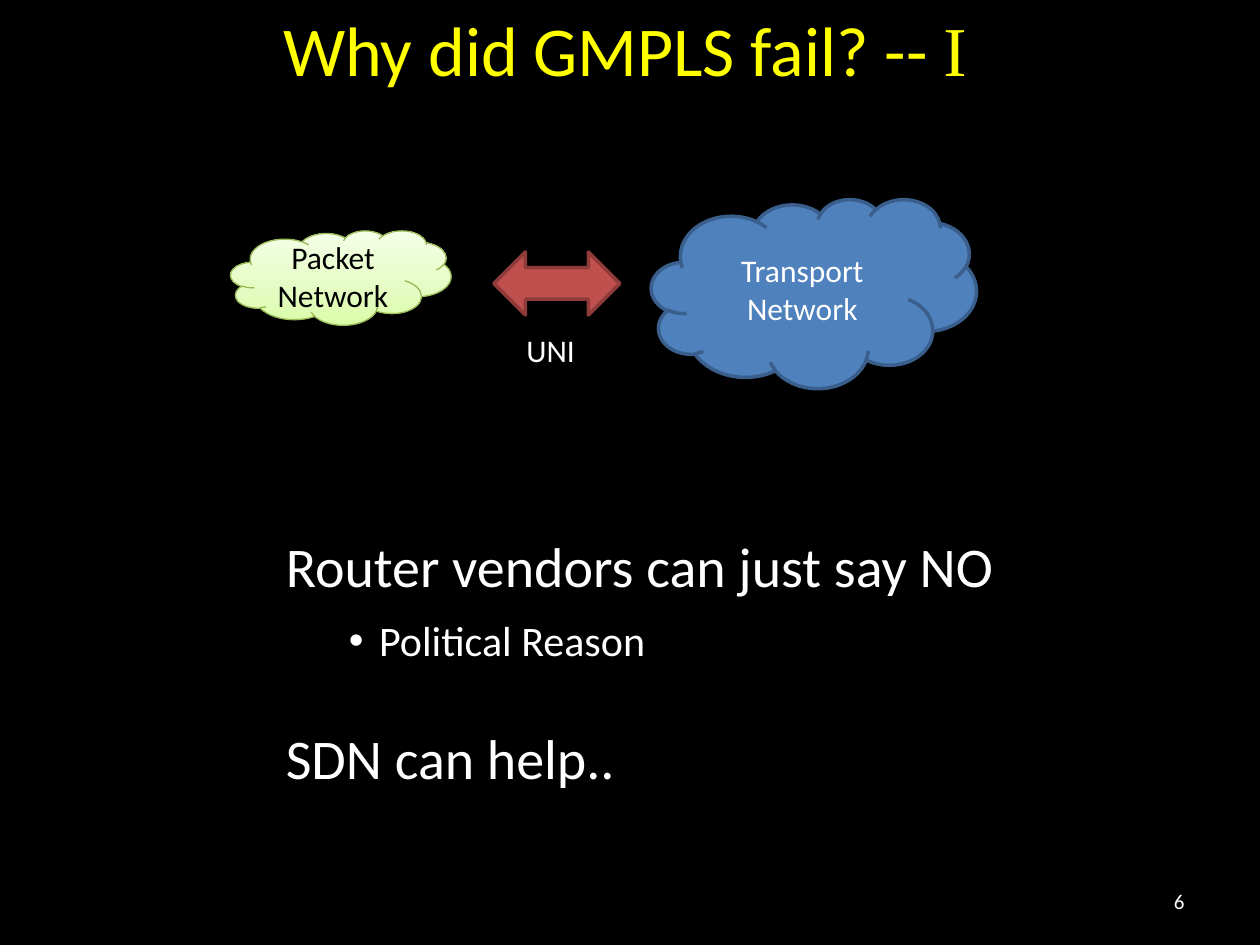
from copy import deepcopy
from dataclasses import dataclass
from typing import Optional

from lxml import etree
from pptx import Presentation
from pptx.dml.color import RGBColor
from pptx.enum.shapes import MSO_SHAPE
from pptx.enum.text import MSO_ANCHOR, PP_ALIGN
from pptx.oxml.ns import qn
from pptx.util import Inches, Pt

CLOUD = MSO_SHAPE.CLOUD
DOUBLE_ARROW = MSO_SHAPE.LEFT_RIGHT_ARROW
LEFT, CENTER, RIGHT = PP_ALIGN.LEFT, PP_ALIGN.CENTER, PP_ALIGN.RIGHT
TOP, MIDDLE = MSO_ANCHOR.TOP, MSO_ANCHOR.MIDDLE


@dataclass(frozen=True)
class Theme:
    font: str = "Calibri"
    numeral_font: str = "Times New Roman"
    background: str = "000000"
    text: str = "FFFFFF"
    dark_text: str = "000000"
    title: str = "FFFF00"
    transport: str = "4F81BD"
    transport_line: str = "3A5F8C"
    packet: tuple = ((0, "DAFDA7"), (0.35, "E4FCC2"), (1, "F5FFE7"))
    packet_line: str = "98B955"
    arrow: str = "C0504D"
    arrow_line: str = "8E3B39"
    title_size: int = 40
    point_size: int = 32
    reason_size: int = 24
    label_size: int = 18
    number_size: int = 12


THEME = Theme()


@dataclass(frozen=True)
class Box:
    left: float
    top: float
    width: float
    height: float

    def lengths(self) -> tuple:
        return tuple(Inches(n) for n in (self.left, self.top, self.width, self.height))


@dataclass(frozen=True)
class Label:
    text: str
    box: Box
    size: int
    color: str = THEME.text
    align: int = LEFT
    anchor: int = TOP
    bullet: bool = False


@dataclass(frozen=True)
class Figure:
    kind: int
    box: Box
    line: str
    line_width: float
    fill: Optional[str] = None
    text: str = ""
    color: str = THEME.text


LABELS = (
    Label("6", Box(7.17, 6.95, 2.33, 0.4), THEME.number_size, align=RIGHT, anchor=MIDDLE),
    Label("UNI", Box(4.08, 2.58, 1, 0.4), THEME.label_size),
    Label("Router vendors can just say NO", Box(2.17, 4.17, 7.17, 0.64), THEME.point_size),
    Label("Political Reason", Box(2.67, 4.83, 3.75, 0.5), THEME.reason_size, bullet=True),
    Label("SDN can help..", Box(2.17, 5.69, 7.17, 0.64), THEME.point_size),
)
TITLE = Label("Why did GMPLS fail? -- ", Box(0.25, 0, 9.42, 0.58),
              THEME.title_size, THEME.title, CENTER)
TRANSPORT = Figure(CLOUD, Box(5.17, 1.58, 2.58, 1.5), THEME.transport_line, 2,
                   THEME.transport, "Transport Network")
PACKET = Figure(CLOUD, Box(1.83, 1.83, 1.75, 0.75), THEME.packet_line, 0.75,
                text="Packet Network", color=THEME.dark_text)
INTERFACE = Figure(DOUBLE_ARROW, Box(3.92, 2, 1, 0.5), THEME.arrow_line, 2, THEME.arrow)


def rgb(color: str) -> RGBColor:
    return RGBColor.from_string(color)


def write_text(shape, text: str, size: int, color: str, align: int, anchor: int):
    frame = shape.text_frame
    frame.word_wrap = True
    frame.vertical_anchor = anchor
    paragraph = frame.paragraphs[0]
    paragraph.alignment = align
    paragraph.add_run().text = text
    paragraph.font.name = THEME.font
    paragraph.font.size = Pt(size)
    paragraph.font.color.rgb = rgb(color)
    return paragraph


def add_bullet(paragraph, indent: float) -> None:
    properties = paragraph._p.get_or_add_pPr()
    properties.set("marL", str(Inches(indent)))
    properties.set("indent", str(-Inches(indent)))
    bullet = etree.Element(qn("a:buChar"), char="•")
    bullet_font = etree.Element(qn("a:buFont"), typeface="Arial")
    properties.insert(0, bullet)
    properties.insert(0, bullet_font)


def add_label(slide, label: Label):
    shape = slide.shapes.add_textbox(*label.box.lengths())
    paragraph = write_text(shape, label.text, label.size, label.color,
                           label.align, label.anchor)
    if label.bullet:
        add_bullet(paragraph, 0.24)
    return paragraph


def add_figure(slide, figure: Figure):
    shape = slide.shapes.add_shape(figure.kind, *figure.box.lengths())
    shape.shadow.inherit = False
    shape.line.color.rgb = rgb(figure.line)
    shape.line.width = Pt(figure.line_width)
    if figure.fill:
        shape.fill.solid()
        shape.fill.fore_color.rgb = rgb(figure.fill)
    if figure.text:
        write_text(shape, figure.text, THEME.label_size, figure.color, CENTER, MIDDLE)
    return shape


def fill_gradient(shape, stops: tuple) -> None:
    shape.fill.gradient()
    shape.fill.gradient_angle = 90
    stop_list = shape._element.spPr.find(".//" + qn("a:gsLst"))
    while len(stop_list) < len(stops):
        stop_list.append(deepcopy(stop_list[0]))
    for stop, (position, color) in zip(shape.fill.gradient_stops, stops):
        stop.position = position
        stop.color.rgb = rgb(color)


def add_soft_shadow(shape) -> None:
    effects = shape._element.spPr.find(qn("a:effectLst"))
    shadow = etree.SubElement(effects, qn("a:outerShdw"), blurRad=str(Pt(3.1)),
                              dist=str(Pt(1.6)), dir="5400000", rotWithShape="0")
    color = etree.SubElement(shadow, qn("a:srgbClr"), val="000000")
    etree.SubElement(color, qn("a:alpha"), val="38000")


def main() -> None:
    presentation = Presentation()
    presentation.slide_width, presentation.slide_height = Inches(10), Inches(7.5)
    slide = presentation.slides.add_slide(presentation.slide_layouts[6])
    slide.background.fill.solid()
    slide.background.fill.fore_color.rgb = rgb(THEME.background)

    title = add_label(slide, TITLE)
    numeral = title.add_run()
    numeral.text = "I"
    numeral.font.name = THEME.numeral_font

    add_figure(slide, TRANSPORT)
    packet = add_figure(slide, PACKET)
    fill_gradient(packet, THEME.packet)
    add_soft_shadow(packet)
    add_figure(slide, INTERFACE)

    for label in LABELS:
        add_label(slide, label)
    presentation.save("out.pptx")


if __name__ == "__main__":
    main()
